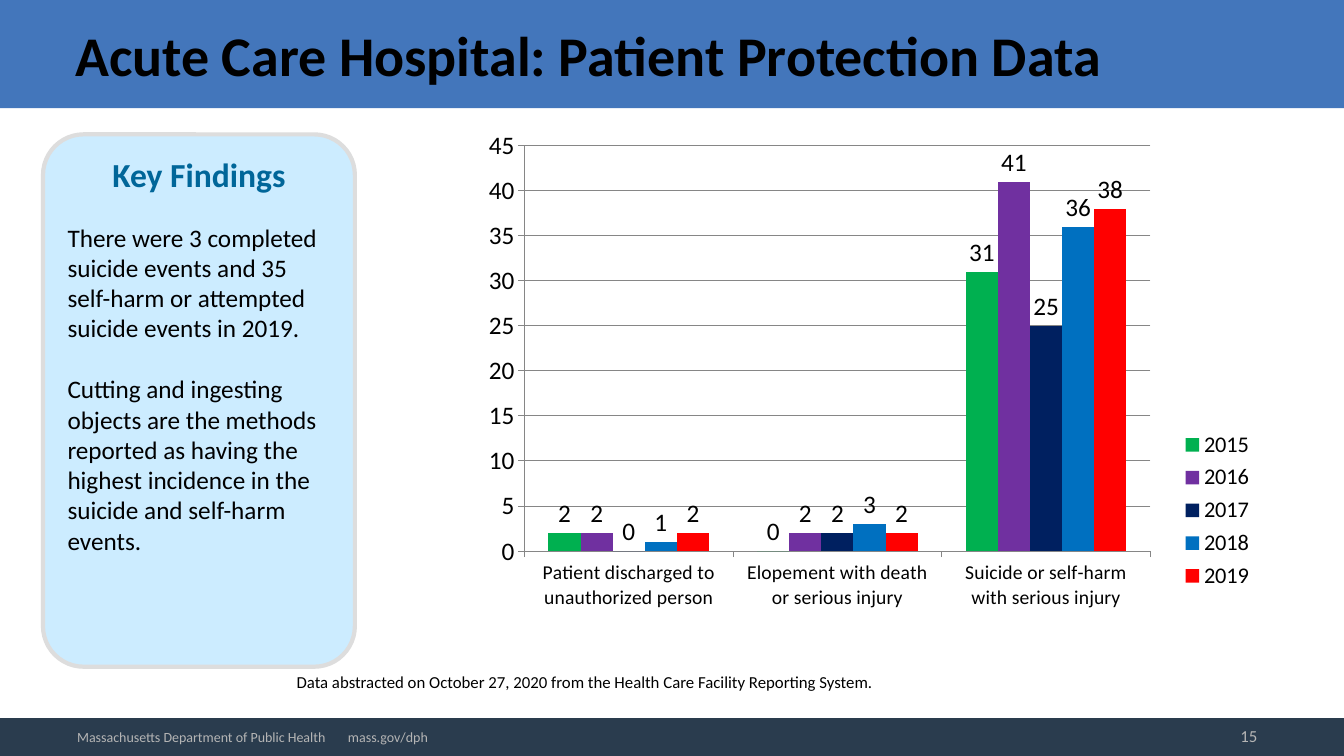
"""Build the Acute Care Hospital patient protection data slide."""
from dataclasses import dataclass

from lxml.etree import SubElement
from pptx import Presentation
from pptx.chart.data import CategoryChartData
from pptx.dml.color import RGBColor
from pptx.enum.chart import XL_CHART_TYPE, XL_LABEL_POSITION, XL_LEGEND_POSITION, XL_TICK_MARK
from pptx.enum.shapes import MSO_SHAPE
from pptx.enum.text import MSO_ANCHOR, MSO_AUTO_SIZE, PP_ALIGN
from pptx.oxml.ns import qn
from pptx.util import Pt

EMU_PER_PX = 9525


@dataclass(frozen=True)
class Theme:
    font: str = "Calibri"
    header: str = "4376BB"
    footer: str = "2A3C4E"
    footer_text: str = "B5B5B5"
    text: str = "000000"
    card: str = "CCECFF"
    card_line: str = "DDDDDD"
    heading: str = "006699"
    grid: str = "868686"
    title_size: int = 40
    heading_size: int = 24
    body_size: int = 18
    legend_size: int = 16
    category_size: int = 14
    note_size: int = 12
    footer_size: int = 10


@dataclass(frozen=True)
class Box:
    left: int
    top: int
    width: int
    height: int

    def emu(self) -> tuple:
        return tuple(v * EMU_PER_PX for v in (self.left, self.top, self.width, self.height))


@dataclass(frozen=True)
class Band:
    box: Box
    color: str


@dataclass(frozen=True)
class Caption:
    box: Box
    text: str
    size: int
    color: str
    align: PP_ALIGN = PP_ALIGN.LEFT
    anchor: MSO_ANCHOR = MSO_ANCHOR.MIDDLE
    tab: int = 0


@dataclass(frozen=True)
class Finding:
    text: str
    size: int
    color: str
    bold: bool = False
    align: PP_ALIGN = PP_ALIGN.LEFT
    space_before: int = 0


@dataclass(frozen=True)
class Year:
    name: str
    events: tuple
    color: str


THEME = Theme()
TITLE = "Acute Care Hospital: Patient Protection Data"
TITLE_BOX = Box(62, 6, 1152, 92)
CARD_BOX = Box(41, 128, 297, 507)
CHART_BOX = Box(431, 115, 796, 538)
PLOT_AREA = (0.086, 0.044, 0.749, 0.718)
LEGEND_AREA = (0.86, 0.54, 0.11, 0.3)
BANDS = (
    Band(Box(0, 0, 1280, 103), THEME.header),
    Band(Box(0, 684, 1280, 36), THEME.footer),
)
CAPTIONS = (
    Caption(Box(273, 635, 644, 29),
            "Data abstracted on October 27, 2020 from the Health Care Facility Reporting System.",
            THEME.note_size, THEME.text, anchor=MSO_ANCHOR.TOP),
    Caption(Box(920, 682, 287, 38), "15", THEME.note_size, THEME.footer_text, PP_ALIGN.RIGHT),
    Caption(Box(64, 684, 400, 36), "Massachusetts Department of Public Health\tmass.gov/dph",
            THEME.footer_size, THEME.footer_text, tab=258),
)
FINDINGS = (
    Finding("Key Findings", THEME.heading_size, THEME.heading, True, PP_ALIGN.CENTER),
    Finding("There were 3 completed suicide events and 35 self-harm or attempted "
            "suicide events in 2019.", THEME.body_size, THEME.text, space_before=20),
    Finding("Cutting and ingesting objects are the methods reported as having the highest "
            "incidence in the suicide and self-harm events.",
            THEME.body_size, THEME.text, space_before=22),
)
EVENT_TYPES = (
    "Patient discharged to unauthorized person",
    "Elopement with death or serious injury",
    "Suicide or self-harm with serious injury",
)
YEARS = (
    Year("2015", (2, 0, 31), "00B050"),
    Year("2016", (2, 2, 41), "7030A0"),
    Year("2017", (0, 2, 25), "002060"),
    Year("2018", (1, 3, 36), "0070C0"),
    Year("2019", (2, 2, 38), "FF0000"),
)


def rgb(color: str) -> RGBColor:
    return RGBColor.from_string(color)


def set_font(font, size: int, color: str, bold: bool = False) -> None:
    font.name, font.size, font.bold = THEME.font, Pt(size), bold
    font.color.rgb = rgb(color)


def add_title(slide) -> None:
    title = slide.shapes.title
    title.left, title.top, title.width, title.height = TITLE_BOX.emu()
    frame = title.text_frame
    frame.text = TITLE
    frame.word_wrap, frame.auto_size = True, MSO_AUTO_SIZE.NONE
    frame.vertical_anchor = MSO_ANCHOR.MIDDLE
    frame.paragraphs[0].alignment = PP_ALIGN.LEFT
    set_font(frame.paragraphs[0].runs[0].font, THEME.title_size, THEME.text, True)


def add_band(slide, band: Band) -> None:
    bar = slide.shapes.add_shape(MSO_SHAPE.RECTANGLE, *band.box.emu())
    bar.shadow.inherit = False
    bar.fill.solid()
    bar.fill.fore_color.rgb = rgb(band.color)
    bar.line.fill.background()
    slide.shapes._spTree.insert(2, bar._element)


def add_caption(slide, caption: Caption) -> None:
    frame = slide.shapes.add_textbox(*caption.box.emu()).text_frame
    frame.word_wrap, frame.vertical_anchor = True, caption.anchor
    frame.text = caption.text
    paragraph = frame.paragraphs[0]
    paragraph.alignment = caption.align
    if caption.tab:
        tabs = SubElement(paragraph._p.get_or_add_pPr(), qn("a:tabLst"))
        SubElement(tabs, qn("a:tab"), pos=str(caption.tab * EMU_PER_PX), algn="l")
    for run in paragraph.runs:
        set_font(run.font, caption.size, caption.color)


def add_card(slide) -> None:
    card = slide.shapes.add_shape(MSO_SHAPE.ROUNDED_RECTANGLE, *CARD_BOX.emu())
    card.adjustments[0] = 0.13
    card.shadow.inherit = False
    card.fill.solid()
    card.fill.fore_color.rgb = rgb(THEME.card)
    card.line.color.rgb, card.line.width = rgb(THEME.card_line), Pt(3)
    frame = card.text_frame
    frame.word_wrap, frame.vertical_anchor = True, MSO_ANCHOR.TOP
    frame.margin_left = frame.margin_right = 12 * EMU_PER_PX
    frame.margin_top = frame.margin_bottom = 7 * EMU_PER_PX
    for index, finding in enumerate(FINDINGS):
        paragraph = frame.add_paragraph() if index else frame.paragraphs[0]
        paragraph.text = finding.text
        paragraph.alignment = finding.align
        if finding.space_before:
            paragraph.space_before = Pt(finding.space_before)
        set_font(paragraph.runs[0].font, finding.size, finding.color, finding.bold)


def place(part, index: int, area: tuple, inner: bool = False) -> None:
    for old in part.findall(qn("c:layout")):
        part.remove(old)
    layout = SubElement(part, qn("c:layout"))
    part.insert(index, layout)
    manual = SubElement(layout, qn("c:manualLayout"))
    target = [("layoutTarget", "inner")] if inner else []
    modes = [("xMode", "edge"), ("yMode", "edge")]
    for tag, value in target + modes + list(zip("xywh", area)):
        SubElement(manual, qn(f"c:{tag}"), val=str(value))


def add_events_chart(slide) -> None:
    events = CategoryChartData()
    events.categories = EVENT_TYPES
    for year in YEARS:
        events.add_series(year.name, year.events)
    chart = slide.shapes.add_chart(XL_CHART_TYPE.COLUMN_CLUSTERED, *CHART_BOX.emu(), events).chart
    set_font(chart.font, THEME.body_size, THEME.text)
    chart.has_title = False
    chart.has_legend = True
    chart.legend.position = XL_LEGEND_POSITION.RIGHT
    chart.legend.include_in_layout = False
    set_font(chart.legend.font, THEME.legend_size, THEME.text)
    plot = chart.plots[0]
    plot.gap_width, plot.overlap, plot.vary_by_categories = 150, 0, False
    plot.has_data_labels = True
    plot.data_labels.show_value = True
    plot.data_labels.position = XL_LABEL_POSITION.OUTSIDE_END
    set_font(plot.data_labels.font, THEME.body_size, THEME.text)
    for series, year in zip(plot.series, YEARS):
        series.format.fill.solid()
        series.format.fill.fore_color.rgb = rgb(year.color)
    counts = chart.value_axis
    counts.minimum_scale, counts.maximum_scale, counts.major_unit = 0, 45, 5
    counts.has_major_gridlines = True
    for axis, size in ((counts, THEME.body_size), (chart.category_axis, THEME.category_size)):
        axis.major_tick_mark = XL_TICK_MARK.OUTSIDE
        set_font(axis.tick_labels.font, size, THEME.text)
    for rule in (counts, chart.category_axis, counts.major_gridlines):
        rule.format.line.color.rgb, rule.format.line.width = rgb(THEME.grid), Pt(0.75)
    place(chart._chartSpace.chart.plotArea, 0, PLOT_AREA, inner=True)
    place(chart.legend._element, 1, LEGEND_AREA)


def main() -> None:
    deck = Presentation()
    deck.slide_width, deck.slide_height = 1280 * EMU_PER_PX, 720 * EMU_PER_PX
    slide = deck.slides.add_slide(deck.slide_layouts[5])
    add_title(slide)
    for band in BANDS:
        add_band(slide, band)
    add_events_chart(slide)
    add_card(slide)
    for caption in CAPTIONS:
        add_caption(slide, caption)
    deck.save("out.pptx")


if __name__ == "__main__":
    main()
